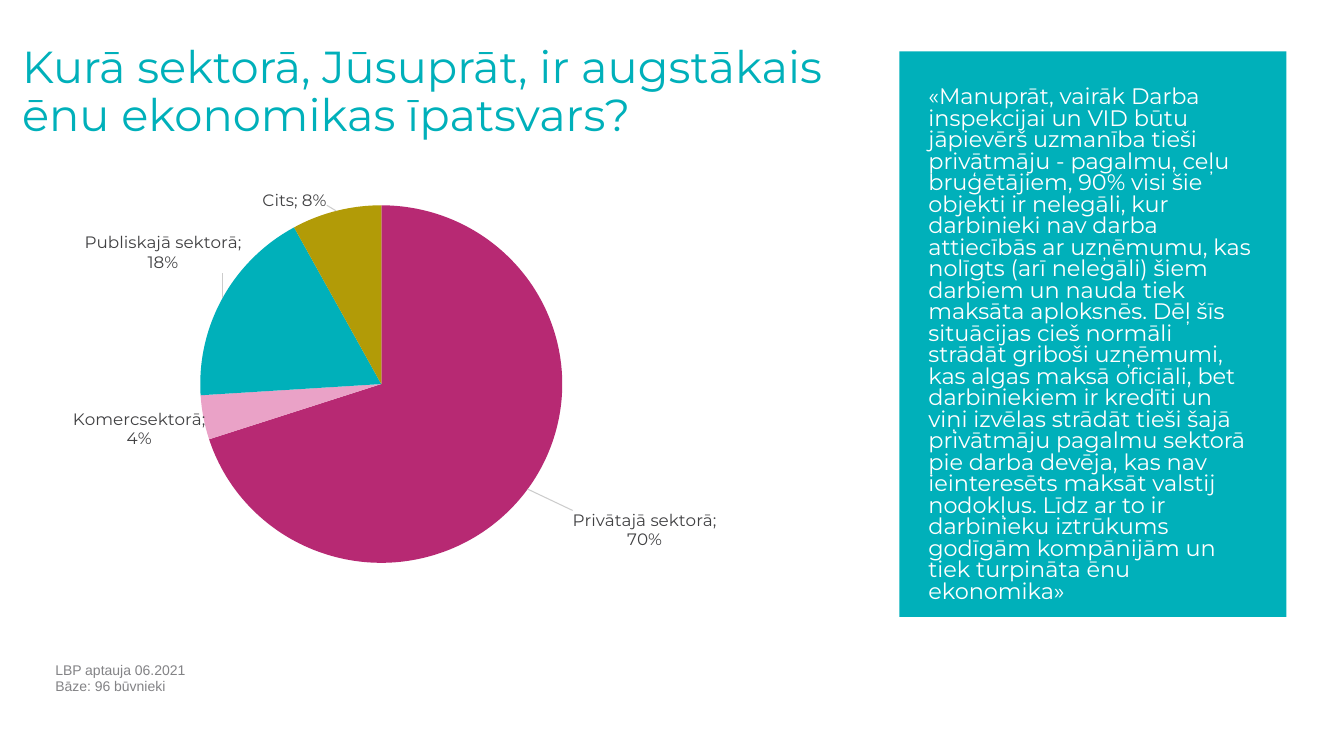
from copy import deepcopy

from pptx import Presentation
from pptx.chart.data import CategoryChartData
from pptx.dml.color import RGBColor
from pptx.enum.chart import XL_CHART_TYPE, XL_LABEL_POSITION
from pptx.enum.shapes import MSO_SHAPE
from pptx.enum.text import MSO_ANCHOR
from pptx.oxml import parse_xml
from pptx.oxml.ns import nsdecls
from pptx.util import Inches, Pt

TEAL = RGBColor(0x00, 0xB0, 0xBA)
PLUM = RGBColor(0xB7, 0x29, 0x73)
PINK = RGBColor(0xEA, 0xA2, 0xC7)
GOLD = RGBColor(0xB2, 0x9B, 0x07)
DARK = RGBColor(0x41, 0x41, 0x43)
GRAY = RGBColor(0x83, 0x83, 0x86)
WHITE = RGBColor(0xFF, 0xFF, 0xFF)

TITLE = "Kurā sektorā, Jūsuprāt, ir augstākais ēnu ekonomikas īpatsvars?"
QUOTE = (
    "«Manuprāt, vairāk Darba inspekcijai un VID būtu jāpievērš uzmanība tieši "
    "privātmāju - pagalmu, ceļu bruģētājiem, 90% visi šie objekti ir nelegāli, "
    "kur darbinieki nav darba attiecībās ar uzņēmumu, kas nolīgts (arī nelegāli) "
    "šiem darbiem un nauda tiek maksāta aploksnēs. Dēļ šīs situācijas cieš "
    "normāli strādāt griboši uzņēmumi, kas algas maksā oficiāli, bet "
    "darbiniekiem ir kredīti un viņi izvēlas strādāt tieši šajā privātmāju "
    "pagalmu sektorā pie darba devēja, kas nav ieinteresēts maksāt valstij "
    "nodokļus. Līdz ar to ir darbinieku iztrūkums godīgām kompānijām un tiek "
    "turpināta ēnu ekonomika»"
)
SOURCE = ["LBP aptauja 06.2021", "Bāze: 96 būvnieki"]

# sector, share, colour, label shift as parts of the chart's width and height
SECTORS = [
    ("Privātajā sektorā", 0.70, PLUM, (0.05, 0.04)),
    ("Komercsektorā", 0.04, PINK, (0.01, -0.02)),
    ("Publiskajā sektorā", 0.18, TEAL, (0.03, -0.05)),
    ("Cits", 0.08, GOLD, (-0.01, 0)),
]


def node(tag, inner="", attrs=""):
    return parse_xml(f"<c:{tag} {nsdecls('c', 'a')} {attrs}>{inner}</c:{tag}>")


def layout(x, y, extra="", mode=""):
    """Return a manual chart layout."""
    return node("layout", f'<c:manualLayout>{mode}<c:x val="{x}"/><c:y val="{y}"/>'
                          f"{extra}</c:manualLayout>")


class Page:
    def __init__(self, slide, face):
        self.shapes = slide.shapes
        self.face = face

    def style(self, font, size, color, face=None):
        font.name = face or self.face
        font.size = Pt(size)
        font.color.rgb = color

    def panel(self, box, color):
        shape = self.shapes.add_shape(MSO_SHAPE.RECTANGLE, *map(Inches, box))
        shape.shadow.inherit = False
        shape.fill.solid()
        shape.fill.fore_color.rgb = color
        shape.line.fill.background()

    def text(self, box, lines, size, color, anchor, face=None, lead=None):
        frame = self.shapes.add_textbox(*map(Inches, box)).text_frame
        frame.word_wrap = True
        frame.vertical_anchor = anchor
        for i, line in enumerate(lines):
            para = frame.add_paragraph() if i else frame.paragraphs[0]
            para.line_spacing = lead
            run = para.add_run()
            run.text = line
            self.style(run.font, size, color, face)

    def pie(self, box, rows):
        data = CategoryChartData(number_format="0%")
        data.categories = [row[0] for row in rows]
        data.add_series("Series 1", [row[1] for row in rows])
        chart = self.shapes.add_chart(
            XL_CHART_TYPE.PIE, *map(Inches, box), data).chart
        chart.has_title = False
        chart.has_legend = False
        self.style(chart.font, 10, DARK)
        plot = chart.plots[0]
        plot.vary_by_categories = True
        series = plot.series[0]
        for i, row in enumerate(rows):
            fill = series.points[i].format.fill
            fill.solid()
            fill.fore_color.rgb = row[2]
        self.labels(series, [row[3] for row in rows])

        area = chart._chartSpace.chart.plotArea
        for old in area.findall(node("layout").tag):
            area.remove(old)
        area.insert(0, layout(
            0.014, 0.032, '<c:w val="0.783"/><c:h val="0.798"/>',
            '<c:layoutTarget val="inner"/><c:xMode val="edge"/><c:yMode val="edge"/>'))

    def labels(self, series, shifts):
        """Label each slice with its name and share, moved by its shift."""
        labels = series.data_labels
        self.style(labels.font, 12, DARK)
        labels.number_format = "0%"
        labels.number_format_is_linked = False
        labels.position = XL_LABEL_POSITION.BEST_FIT
        labels.show_value = True
        labels.show_category_name = True
        labels.show_percentage = False
        root = labels._element
        for old in root.findall(node("showLeaderLines").tag):
            root.remove(old)
        root.append(node("separator", "; "))
        shared = list(root)
        for i, shift in enumerate(shifts):
            label = node("dLbl", f'<c:idx val="{i}"/>')
            label.append(layout(*shift))
            label.extend(deepcopy(part) for part in shared)
            root.insert(i, label)
        root.append(node("showLeaderLines", attrs='val="1"'))
        root.append(node("leaderLines", (
            '<c:spPr><a:ln w="9525"><a:solidFill><a:srgbClr val="CCCCCC"/>'
            "</a:solidFill></a:ln></c:spPr>")))


def main():
    deck = Presentation()
    deck.slide_width = Inches(13.33)
    deck.slide_height = Inches(7.5)
    page = Page(deck.slides.add_slide(deck.slide_layouts[6]), "Montserrat")
    page.panel((8.92, 0.51, 3.84, 5.61), TEAL)
    page.text((9.11, 0.82, 3.43, 5.06), [QUOTE], 16, WHITE, MSO_ANCHOR.TOP, lead=0.8)
    page.text((0.12, 0.18, 8.69, 1.27), [TITLE], 32, TEAL, MSO_ANCHOR.BOTTOM, lead=0.9)
    page.pie((0.55, 1.84, 7.97, 4.5), SECTORS)
    page.text((0.45, 6.49, 2.83, 0.47), SOURCE, 10, GRAY, MSO_ANCHOR.MIDDLE, "Arial")
    deck.save("out.pptx")


if __name__ == "__main__":
    main()
